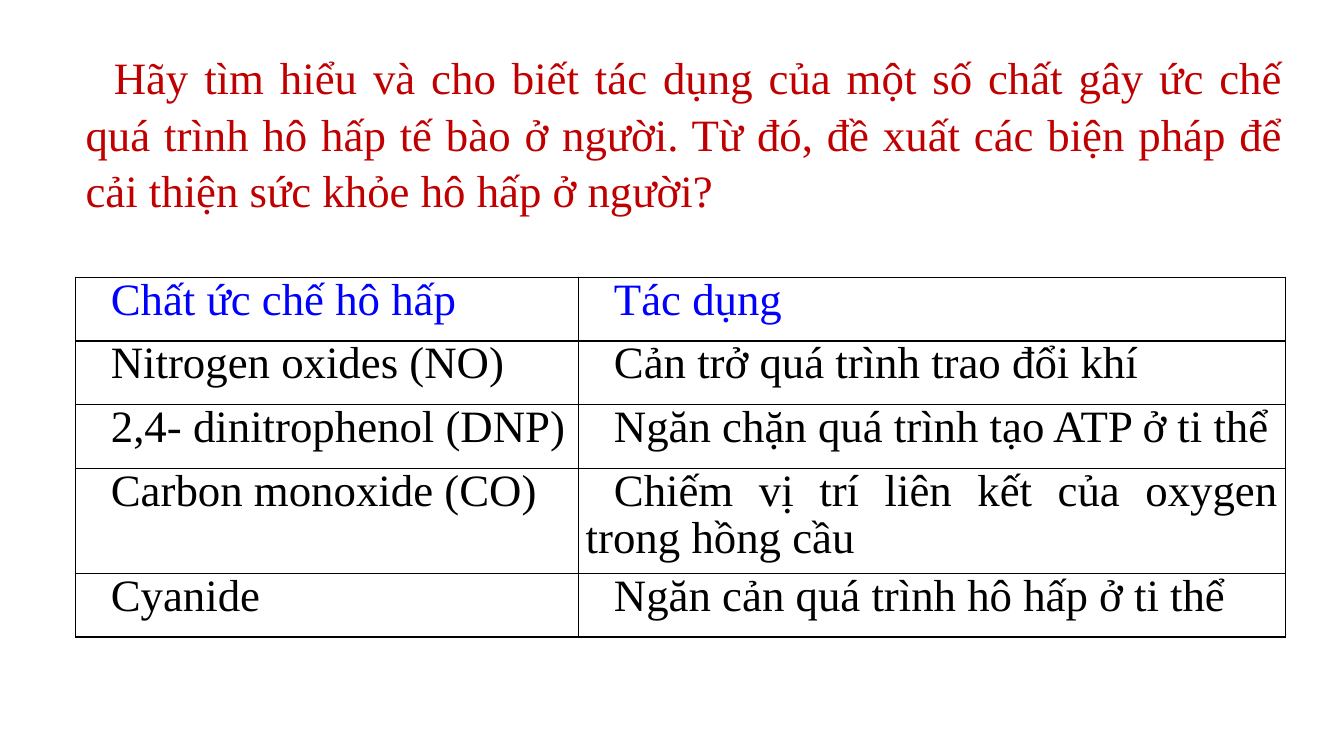
import pptx
import pptx.util
import pptx.dml.color
import pptx.enum.text
import pptx.oxml
import pptx.oxml.ns

PX = 9144
RED = pptx.dml.color.RGBColor(0xC0, 0x00, 0x00)
BLUE = pptx.dml.color.RGBColor(0x00, 0x00, 0xFF)
BLACK = pptx.dml.color.RGBColor(0x00, 0x00, 0x00)

QUESTION = (
    "Hãy tìm hiểu và cho biết tác dụng của một số chất gây ức chế quá trình "
    "hô hấp tế bào ở người. Từ đó, đề xuất các biện pháp để cải thiện sức khỏe "
    "hô hấp ở người?"
)
INHIBITORS = [
    ("Chất ức chế hô hấp", "Tác dụng"),
    ("Nitrogen oxides (NO)", "Cản trở quá trình trao đổi khí"),
    ("2,4- dinitrophenol (DNP)", "Ngăn chặn quá trình tạo ATP ở ti thể"),
    ("Carbon monoxide (CO)", "Chiếm vị trí liên kết của oxygen trong hồng cầu"),
    ("Cyanide", "Ngăn cản quá trình hô hấp ở ti thể"),
]
COLUMN_SHARES = (499, 701)
ROW_SHARES = (62, 62, 62, 102, 62)


def px(length):
    return pptx.util.Emu(round(length * PX))


def apply(target, values):
    for name, value in values.items():
        setattr(target, name, value)


def write(frame, text, color, line_spacing, space_after):
    frame.word_wrap = True
    para = frame.paragraphs[0]
    apply(para, {
        "alignment": pptx.enum.text.PP_ALIGN.JUSTIFY,
        "line_spacing": line_spacing,
        "space_after": pptx.util.Pt(space_after),
    })
    apply_indent = para._p.get_or_add_pPr()
    apply_indent.set("marL", "0")
    apply_indent.set("indent", str(px(28)))
    span = para.add_run()
    span.text = text
    apply(span.font, {"name": "Times New Roman", "size": pptx.util.Pt(32)})
    span.font.color.rgb = color


def border(cell):
    properties = cell._tc.get_or_add_tcPr()
    for index, side in enumerate(("lnL", "lnR", "lnT", "lnB")):
        line = pptx.oxml.parse_xml(
            f'<a:{side} {pptx.oxml.ns.nsdecls("a")} w="12700">'
            f'<a:solidFill><a:srgbClr val="{BLACK}"/></a:solidFill></a:{side}>'
        )
        properties.insert(index, line)


def add_question(page, left, top, width, height):
    box = page.shapes.add_textbox(px(left), px(top), px(width), px(height))
    write(box.text_frame, QUESTION, RED, 1.05, 5)


def add_inhibitor_table(page, left, top, width, height):
    table = page.shapes.add_table(
        len(INHIBITORS), len(COLUMN_SHARES),
        px(left), px(top), px(width), px(height),
    ).table
    apply(table, {"first_row": False, "horz_banding": False})
    for column, share in zip(table.columns, COLUMN_SHARES):
        column.width = px(width * share / sum(COLUMN_SHARES))
    for row, share in zip(table.rows, ROW_SHARES):
        row.height = px(height * share / sum(ROW_SHARES))
    for row_index, texts in enumerate(INHIBITORS):
        for column_index, text in enumerate(texts):
            cell = table.cell(row_index, column_index)
            apply(cell, {
                "margin_left": px(7), "margin_right": px(7),
                "margin_top": 0, "margin_bottom": 0,
            })
            cell.fill.background()
            border(cell)
            write(cell.text_frame, text, BLACK if row_index else BLUE, 0.95, 0)


def main():
    deck = pptx.Presentation()
    apply(deck, {"slide_width": px(1333), "slide_height": px(750)})
    page = deck.slides.add_slide(deck.slide_layouts[6])
    add_question(page, 75, 42, 1208, 172)
    add_inhibitor_table(page, 75, 275, 1200, 357)
    deck.save("out.pptx")


if __name__ == "__main__":
    main()
